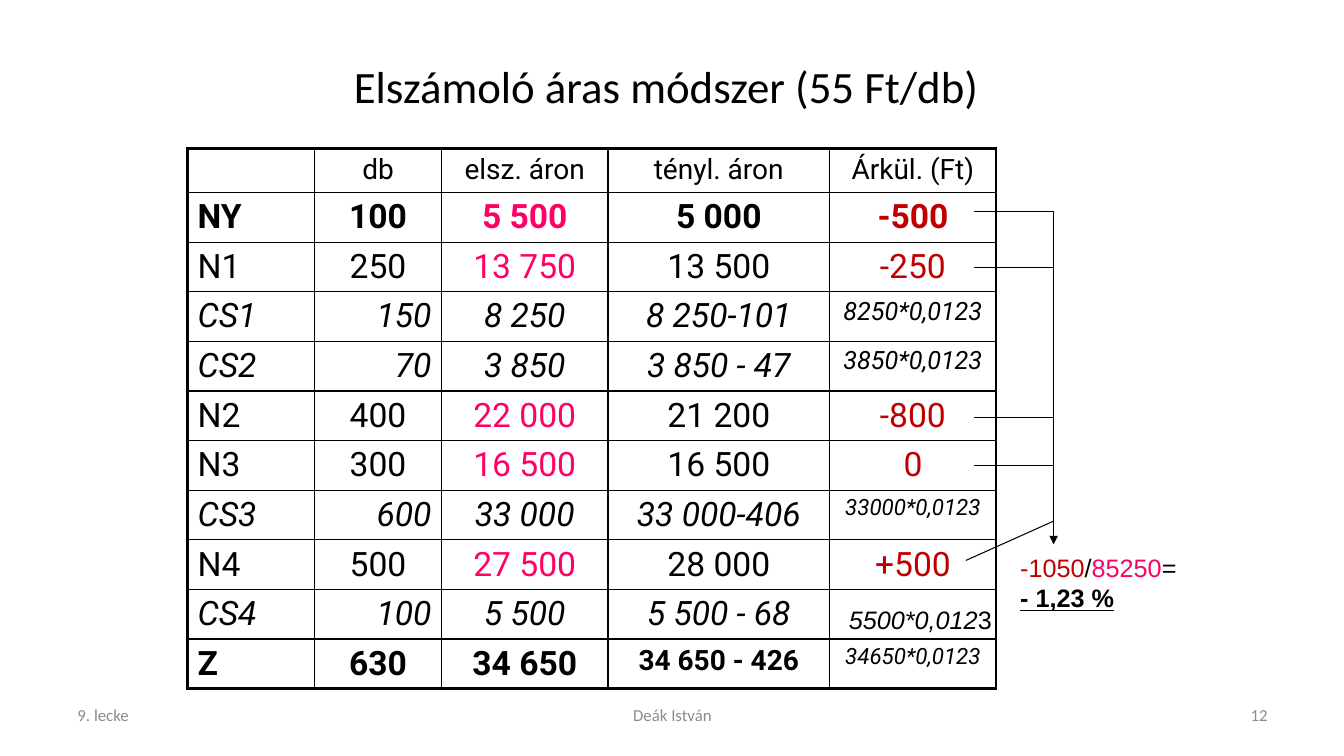
from dataclasses import dataclass
from enum import Enum

from lxml.etree import SubElement
from pptx import Presentation
from pptx.dml.color import RGBColor
from pptx.enum.shapes import MSO_CONNECTOR
from pptx.enum.text import MSO_ANCHOR, MSO_AUTO_SIZE, PP_ALIGN
from pptx.oxml import parse_xml
from pptx.oxml.ns import nsdecls, qn
from pptx.slide import Slide
from pptx.table import _Cell
from pptx.text.text import _Paragraph
from pptx.util import Inches, Pt


@dataclass(frozen=True)
class Theme:
    black: str = "000000"
    pink: str = "FF0066"
    red: str = "C00000"
    grey: str = "8C8C8C"
    heading_font: str = "Calibri"
    table_font: str = "Roboto"
    note_font: str = "Arial"
    title: int = 32
    title_end: int = 40
    header: int = 20
    figure: int = 24
    note: int = 18
    small: int = 16
    footer: int = 12
    outer_border: float = 2.25
    inner_border: float = 1
    line: float = 0.75


THEME = Theme()


@dataclass(frozen=True)
class Span:
    text: str
    size: int
    font: str
    color: str = THEME.black
    bold: bool = False
    italic: bool = False
    underline: bool = False


class Kind(Enum):
    HEADER = "header"
    OPENING = "opening"
    RECEIPT = "receipt"
    ISSUE = "issue"
    CLOSING = "closing"


@dataclass(frozen=True)
class StockRow:
    kind: Kind
    values: tuple[str, str, str, str, str]
    variance_size: int = THEME.figure


@dataclass(frozen=True)
class Label:
    left: float
    top: float
    width: float
    height: float
    lines: tuple[tuple[Span, ...], ...]
    align: PP_ALIGN = PP_ALIGN.LEFT
    anchor: MSO_ANCHOR = MSO_ANCHOR.TOP
    wrap: bool = False


@dataclass(frozen=True)
class Line:
    start: tuple[float, float]
    end: tuple[float, float]
    arrow: bool = False


STOCK_ROWS = (
    StockRow(Kind.HEADER, ("", "db", "elsz. áron", "tényl. áron", "Árkül. (Ft)"), THEME.header),
    StockRow(Kind.OPENING, ("NY", "100", "5 500", "5 000", "-500")),
    StockRow(Kind.RECEIPT, ("N1", "250", "13 750", "13 500", "-250")),
    StockRow(Kind.ISSUE, ("CS1", "150", "8 250", "8 250-101", "8250*0,0123"), THEME.note),
    StockRow(Kind.ISSUE, ("CS2", "70", "3 850", "3 850 - 47", "3850*0,0123"), THEME.note),
    StockRow(Kind.RECEIPT, ("N2", "400", "22 000", "21 200", "-800")),
    StockRow(Kind.RECEIPT, ("N3", "300", "16 500", "16 500", "0")),
    StockRow(Kind.ISSUE, ("CS3", "600", "33 000", "33 000-406", "33000*0,0123"), THEME.small),
    StockRow(Kind.RECEIPT, ("N4", "500", "27 500", "28 000", "+500")),
    StockRow(Kind.ISSUE, ("CS4", "100", "5 500", "5 500 - 68", "")),
    StockRow(Kind.CLOSING, ("Z", "630", "34 650", "34 650 - 426", "34650*0,0123"), THEME.small),
)
COLUMN_WIDTHS = (1.26, 1.26, 1.65, 2.2, 1.65)
ROW_HEIGHT = 0.44
QUANTITY, BOOK, ACTUAL, VARIANCE = 1, 2, 3, 4

TRUNK_X = 10.45
VARIANCE_LINES = (
    *(Line((9.66, y), (TRUNK_X, y)) for y in (2.1, 2.65, 4.14, 4.62)),
    Line((9.58, 5.56), (TRUNK_X, 5.17)),
    Line((TRUNK_X, 2.1), (TRUNK_X, 5.4), arrow=True),
)


def note(text: str, color: str = THEME.black, **style: bool) -> Span:
    return Span(text, THEME.note, THEME.note_font, color, **style)


def footer(left: float, width: float, text: str, align: PP_ALIGN) -> Label:
    span = Span(text, THEME.footer, THEME.heading_font, THEME.grey)
    return Label(left, 6.83, width, 0.52, ((span,),), align, MSO_ANCHOR.MIDDLE, True)


LABELS = (
    footer(0.67, 3.11, "9. lecke", PP_ALIGN.LEFT),
    footer(4.56, 4.22, "Deák István", PP_ALIGN.CENTER),
    footer(9.56, 3.11, "12", PP_ALIGN.RIGHT),
    Label(10.02, 5.43, 1.75, 0.7, (
        (note("-1050", THEME.red), note("/"), note("85250", THEME.pink), note("=")),
        (note("- 1,23 %", bold=True, underline=True),),
    )),
    Label(8.32, 5.95, 1.62, 0.4, ((note("5500*0,012", italic=True), note("3")),)),
)


def add_span(paragraph: _Paragraph, span: Span) -> None:
    run = paragraph.add_run()
    run.text = span.text
    run.font.name = span.font
    run.font.size = Pt(span.size)
    run.font.bold = span.bold
    run.font.italic = span.italic
    run.font.underline = span.underline
    run.font.color.rgb = RGBColor.from_string(span.color)


def add_title(slide: Slide) -> None:
    title = slide.shapes.title
    title.left, title.top = Inches(2.17), Inches(0.42)
    title.width, title.height = Inches(9), Inches(0.77)
    frame = title.text_frame
    frame.auto_size = MSO_AUTO_SIZE.NONE
    frame.vertical_anchor = MSO_ANCHOR.MIDDLE
    heading = frame.paragraphs[0]
    heading.alignment = PP_ALIGN.CENTER
    add_span(heading, Span("Elszámoló áras módszer (55 Ft/db)", THEME.title, THEME.heading_font))
    add_span(heading, Span(" ", THEME.title_end, THEME.heading_font))


def stock_span(row: StockRow, column: int) -> Span:
    size = THEME.header if row.kind is Kind.HEADER else THEME.figure
    bold = row.kind in (Kind.OPENING, Kind.CLOSING)
    italic = row.kind is Kind.ISSUE
    color = THEME.black
    if row.kind in (Kind.OPENING, Kind.RECEIPT):
        color = {BOOK: THEME.pink, VARIANCE: THEME.red}.get(column, THEME.black)
    if column == VARIANCE:
        size = row.variance_size
    if row.kind is Kind.CLOSING:
        if column == ACTUAL:
            size = THEME.header
        elif column == VARIANCE:
            bold, italic = False, True
    return Span(row.values[column], size, THEME.table_font, color, bold, italic)


def set_borders(cell: _Cell, row: int, column: int) -> None:
    outer_edges = {
        "L": column == 0,
        "R": column == len(COLUMN_WIDTHS) - 1,
        "T": row == 0,
        "B": row == len(STOCK_ROWS) - 1,
    }
    properties = cell._tc.get_or_add_tcPr()
    for position, (side, outer) in enumerate(outer_edges.items()):
        width = Pt(THEME.outer_border if outer else THEME.inner_border)
        properties.insert(position, parse_xml(
            f'<a:ln{side} {nsdecls("a")} w="{width}"><a:solidFill>'
            f'<a:srgbClr val="{THEME.black}"/></a:solidFill></a:ln{side}>'))


def add_stock_table(slide: Slide) -> None:
    table = slide.shapes.add_table(
        len(STOCK_ROWS), len(COLUMN_WIDTHS), Inches(1.86), Inches(1.47),
        Inches(sum(COLUMN_WIDTHS)), Inches(5.44)).table
    table.first_row = table.horz_banding = False
    for column, width in enumerate(COLUMN_WIDTHS):
        table.columns[column].width = Inches(width)
    for index, row in enumerate(STOCK_ROWS):
        table.rows[index].height = Inches(ROW_HEIGHT)
        for column, value in enumerate(row.values):
            cell = table.cell(index, column)
            cell.fill.background()
            set_borders(cell, index, column)
            paragraph = cell.text_frame.paragraphs[0]
            paragraph.alignment = PP_ALIGN.CENTER if column else PP_ALIGN.LEFT
            if column == QUANTITY and row.kind is Kind.ISSUE:
                paragraph.alignment = PP_ALIGN.RIGHT
            if value:
                add_span(paragraph, stock_span(row, column))


def add_label(slide: Slide, label: Label) -> None:
    frame = slide.shapes.add_textbox(
        Inches(label.left), Inches(label.top), Inches(label.width), Inches(label.height)).text_frame
    frame.word_wrap = label.wrap
    frame.vertical_anchor = label.anchor
    for index, spans in enumerate(label.lines):
        paragraph = frame.add_paragraph() if index else frame.paragraphs[0]
        paragraph.alignment = label.align
        for span in spans:
            add_span(paragraph, span)


def add_line(slide: Slide, line: Line) -> None:
    connector = slide.shapes.add_connector(
        MSO_CONNECTOR.STRAIGHT, *map(Inches, line.start + line.end))
    connector.line.color.rgb = RGBColor.from_string(THEME.black)
    connector.line.width = Pt(THEME.line)
    if line.arrow:
        SubElement(connector.line._get_or_add_ln(), qn("a:tailEnd"), type="triangle")
    SubElement(connector._element.spPr, qn("a:effectLst"))


def main() -> None:
    deck = Presentation()
    deck.slide_width, deck.slide_height = Inches(13.33), Inches(7.5)
    slide = deck.slides.add_slide(deck.slide_layouts[5])
    add_title(slide)
    add_stock_table(slide)
    for label in LABELS:
        add_label(slide, label)
    for line in VARIANCE_LINES:
        add_line(slide, line)
    deck.save("out.pptx")


if __name__ == "__main__":
    main()
